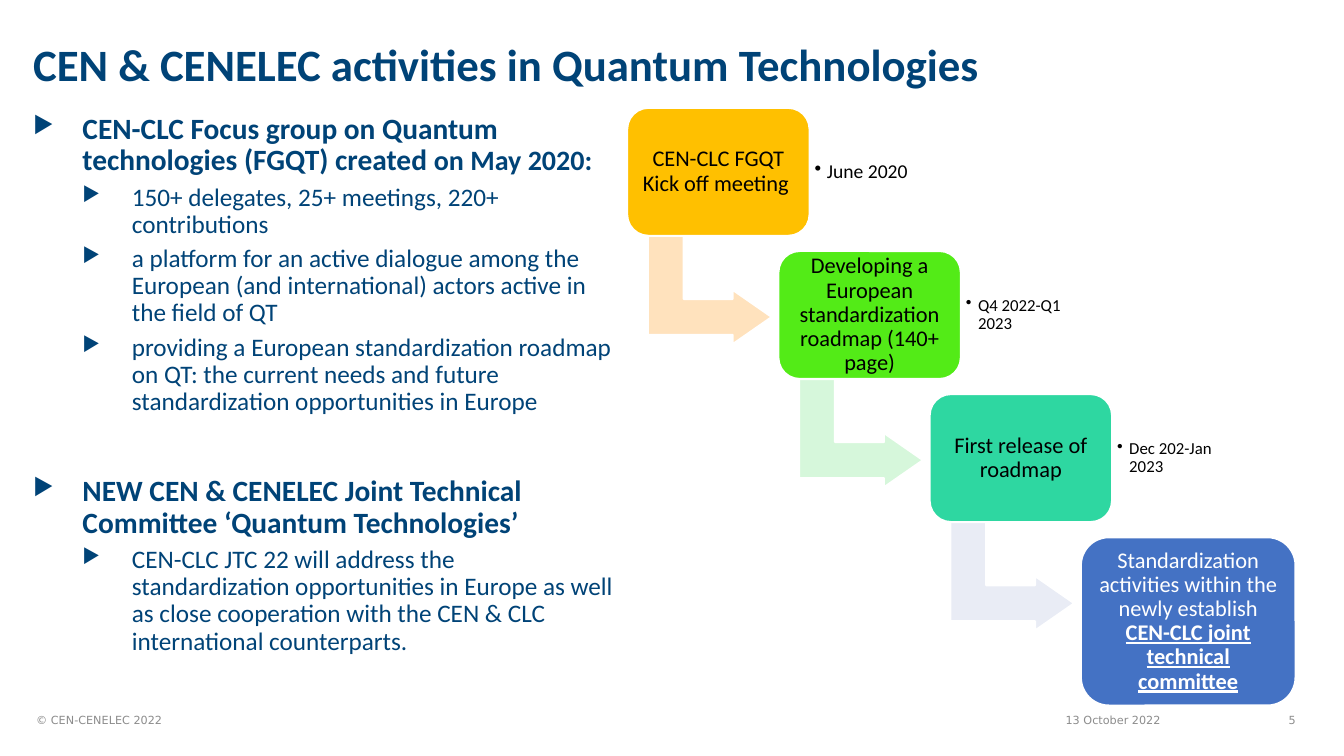
from lxml import etree
from pptx import Presentation
from pptx.dml.color import RGBColor
from pptx.enum.shapes import MSO_SHAPE
from pptx.enum.text import MSO_ANCHOR, PP_ALIGN
from pptx.oxml.ns import qn
from pptx.util import Pt

PX = 9144  # 100 px to the inch
ROUNDED, BENT_ARROW = MSO_SHAPE.ROUNDED_RECTANGLE, MSO_SHAPE.BENT_UP_ARROW
TOP, MIDDLE = MSO_ANCHOR.TOP, MSO_ANCHOR.MIDDLE
LEFT, CENTER, RIGHT = PP_ALIGN.LEFT, PP_ALIGN.CENTER, PP_ALIGN.RIGHT

COLORS = {
    "navy": "004377", "grey": "8C8C8C", "black": "000000", "white": "FFFFFF",
    "amber": "FFC000", "green": "53EB17", "teal": "2ED7A1", "blue": "4472C4",
    "pale amber": "FFE2BD", "pale green": "D6F7DB", "pale blue": "E9ECF5",
}
TITLE = {"size": 32, "bold": True, "color": "navy"}
TOPIC = {"size": 21, "bold": True, "color": "navy"}
TOPIC_DATE = {**TOPIC, "size": 20}
POINT = {"size": 18, "color": "navy"}
FOOTER = {"size": 8, "color": "grey", "name": "DejaVu Sans"}
STEP = {"size": 16, "color": "black"}
LAST_STEP = {**STEP, "color": "white"}
COMMITTEE = {**LAST_STEP, "bold": True, "underline": True}

# Each entry: level, space before, spans
TOPICS = [
    (0, 0, [("CEN-CLC Focus group on Quantum technologies (FGQT) created ", TOPIC),
            ("on May 2020:", TOPIC_DATE)]),
    (1, 5, [("150+ delegates, 25+ meetings, 220+ contributions", POINT)]),
    (1, 5, [("a platform for an active dialogue among the European (and "
             "international) actors active in the field of QT", POINT)]),
    (1, 5, [("providing a European standardization roadmap on QT: the current needs "
             "and future standardization opportunities in Europe", POINT)]),
    (0, 43, [("NEW CEN & CENELEC Joint Technical Committee ‘Quantum Technologies’", TOPIC)]),
    (1, 5, [("CEN-CLC JTC 22 will address the standardization opportunities in Europe as "
             "well as close cooperation with the CEN & CLC international counterparts.", POINT)]),
]
# Each entry: fill, spans, arrow colour, date, date size
STEPS = [
    ("amber", [("CEN-CLC FGQT Kick off meeting ", STEP)], "pale amber", "June 2020", 14),
    ("green", [("Developing a European standardization roadmap (140+ page)", STEP)],
     "pale green", "Q4 2022-Q1 2023", 12),
    ("teal", [("First release of roadmap", STEP)], "pale blue", "Dec 202-Jan 2023", 12),
    ("blue", [("Standardization activities within the newly establish ", LAST_STEP),
              ("CEN-CLC joint technical committee", COMMITTEE)], None, None, None),
]


def emu(*lengths):
    return [length * PX for length in lengths]


def add_spans(para, spans):
    for text, style in spans:
        span = para.add_run()
        span.text = text
        for key, value in {"name": "Calibri", **style}.items():
            if key == "color":
                span.font.color.rgb = RGBColor.from_string(COLORS[value])
            else:
                setattr(span.font, key, Pt(value) if key == "size" else value)


def add_bullet(para, mark, margin, hang, percent=100):
    props = para._p.get_or_add_pPr()
    props.set("marL", str(margin * PX))
    props.set("indent", str(-hang * PX))
    etree.SubElement(props, qn("a:buSzPct")).set("val", str(percent * 1000))
    etree.SubElement(props, qn("a:buChar")).set("char", mark)


def set_frame(frame, anchor, inset):
    frame.word_wrap = True
    frame.vertical_anchor = anchor
    if inset is not None:
        for side in ("left", "top", "right", "bottom"):
            setattr(frame, f"margin_{side}", inset * PX)


def add_text(page, box, spans=(), anchor=MIDDLE, align=LEFT, inset=None):
    frame = page.shapes.add_textbox(*emu(*box)).text_frame
    set_frame(frame, anchor, inset)
    para = frame.paragraphs[0]
    para.alignment = align
    para.line_spacing = 0.9
    add_spans(para, spans)
    return frame


def add_block(page, kind, box, color):
    block = page.shapes.add_shape(kind, *emu(*box))
    block.shadow.inherit = False
    block.fill.solid()
    block.fill.fore_color.rgb = RGBColor.from_string(COLORS[color])
    block.line.color.rgb = RGBColor.from_string(COLORS["white"])
    block.line.width = Pt(1.5)
    return block


def add_topics(page, box):
    frame = add_text(page, box, anchor=TOP)
    for index, (level, before, spans) in enumerate(TOPICS):
        para = frame.add_paragraph() if index else frame.paragraphs[0]
        para.level = level
        para.line_spacing = 0.9
        para.space_before = Pt(before)
        add_bullet(para, "▶", 49 * (level + 1), 49, 80)
        add_spans(para, spans)


def add_step(page, box, color, spans, arrow_color, date, date_size):
    left, top, width, height = box
    # Arrow to the next step
    if arrow_color:
        arrow = add_block(page, BENT_ARROW, (left + 28, top + 119, 108, 123), arrow_color)
        arrow.rotation = 90
        for index, value in enumerate((0.33, 0.25, 0.36)):
            arrow.adjustments[index] = value
    # Step box
    block = add_block(page, ROUNDED, box, color)
    set_frame(block.text_frame, MIDDLE, 7)
    para = block.text_frame.paragraphs[0]
    para.alignment = CENTER
    para.line_spacing = 0.9
    add_spans(para, spans)
    # Date beside the box
    if date:
        frame = add_text(page, (left + width, top + 12, 132, height - 24), inset=5)
        add_bullet(frame.paragraphs[0], "•", 12, 12)
        add_spans(frame.paragraphs[0], [(date, {"size": date_size, "color": "black"})])


def add_staircase(page, box):
    left, top, width, height = box
    for index, step in enumerate(STEPS):
        x, y = left + 150 * index, top + 142 * index
        is_last = index == len(STEPS) - 1
        size = (left + width - x, top + height - y) if is_last else (181, 127)
        add_step(page, (x, y, *size), *step)


def add_footer(page, box):
    left, top, width, height = box
    parts = [
        (left, 171, "© CEN-CENELEC 2022", LEFT),
        (left + 1021, 148, "13 October 2022", LEFT),
        (left + width - 89, 89, "5", RIGHT),
    ]
    for x, part_width, text, align in parts:
        add_text(page, (x, top, part_width, height), [(text, FOOTER)], align=align)


def main():
    deck = Presentation()
    deck.slide_width, deck.slide_height = emu(1333, 750)
    page = deck.slides.add_slide(deck.slide_layouts[6])
    add_text(page, (23, 24, 999, 84),
             [("CEN & CENELEC activities in Quantum Technologies", TITLE)])
    add_topics(page, (23, 108, 596, 553))
    add_staircase(page, (622, 107, 663, 593))
    add_footer(page, (26, 695, 1269, 40))
    deck.save("out.pptx")


if __name__ == "__main__":
    main()
